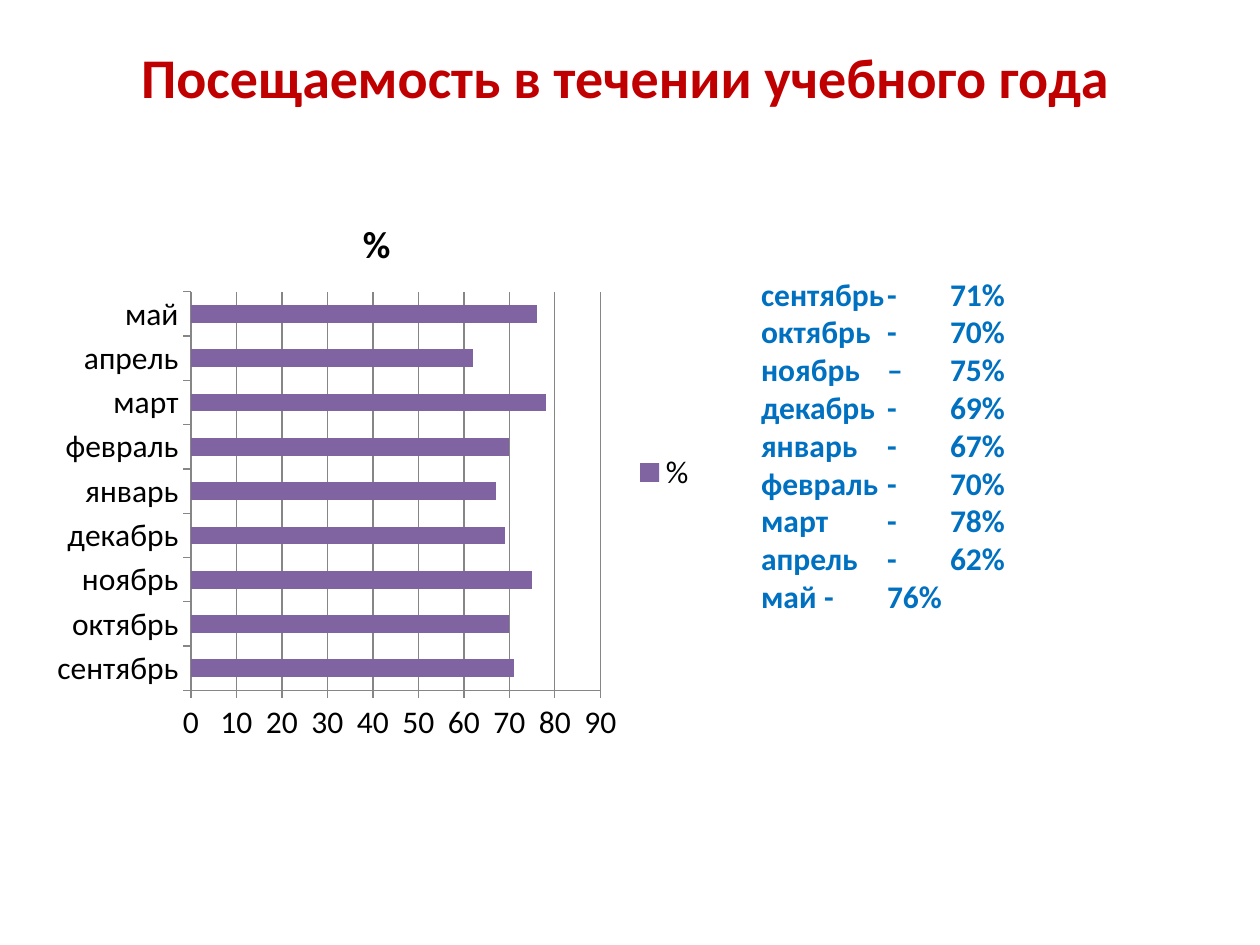
from lxml.etree import SubElement
from pptx import Presentation
from pptx.chart.data import CategoryChartData
from pptx.dml.color import RGBColor
from pptx.enum.chart import XL_CHART_TYPE, XL_LEGEND_POSITION, XL_TICK_MARK
from pptx.enum.text import MSO_ANCHOR, MSO_AUTO_SIZE, PP_ALIGN
from pptx.oxml.ns import qn
from pptx.util import Inches, Pt

COLORS = {"title": "C00000", "list": "0070C0", "bar": "8064A2",
          "text": "000000", "grid": "868686"}
FONT = "Calibri"
ATTENDANCE = {"сентябрь": 71, "октябрь": 70, "ноябрь": 75,
              "декабрь": 69, "январь": 67, "февраль": 70,
              "март": 78, "апрель": 62, "май": 76}
TAB_STOPS = (1.08, 1.3)  # dash column, value column


def rgb(name):
    return RGBColor.from_string(COLORS[name])


def style_font(font, size, color, bold=False):
    font.name, font.size, font.bold = FONT, Pt(size), bold
    font.color.rgb = rgb(color)


def place(sp, left, top, width, height):
    sp.left, sp.top = Inches(left), Inches(top)
    sp.width, sp.height = Inches(width), Inches(height)
    tf = sp.text_frame
    tf.word_wrap = True
    tf.auto_size = MSO_AUTO_SIZE.NONE
    tf.vertical_anchor = MSO_ANCHOR.TOP
    return tf


def add_run(p, text, size, color):
    r = p.add_run()
    r.text = text
    style_font(r.font, size, color, bold=True)


def add_title(s, text):
    p = place(s.shapes.title, 0.2, 0.29, 9.53, 0.64).paragraphs[0]
    p.alignment = PP_ALIGN.CENTER
    add_run(p, text, 32, "title")


def add_month_list(s):
    tf = place(s.placeholders[1], 5.94, 2.13, 3.7, 3.23)
    for i, (month, value) in enumerate(ATTENDANCE.items()):
        p = tf.paragraphs[0] if i == 0 else tf.add_paragraph()
        # No bullet, columns set by tab stops
        pPr = p._p.get_or_add_pPr()
        pPr.set("marL", "0")
        pPr.set("indent", "0")
        SubElement(pPr, qn("a:buNone"))
        tabs = SubElement(pPr, qn("a:tabLst"))
        for pos in TAB_STOPS:
            SubElement(tabs, qn("a:tab"), pos=str(Inches(pos)), algn="l")
        p.space_before = Pt(0)
        dash = "–" if month == "ноябрь" else "-"
        add_run(p, f"{month}\t{dash}\t{value}%", 18, "list")


def style_axis(axis):
    axis.major_tick_mark = XL_TICK_MARK.OUTSIDE
    axis.minor_tick_mark = XL_TICK_MARK.NONE
    axis.format.line.color.rgb = rgb("grid")
    style_font(axis.tick_labels.font, 18, "text")


def add_attendance_chart(s):
    data = CategoryChartData()
    data.categories = list(ATTENDANCE)
    data.add_series("%", list(ATTENDANCE.values()))
    chart = s.shapes.add_chart(
        XL_CHART_TYPE.BAR_CLUSTERED, Inches(0.35), Inches(1.53),
        Inches(5.28), Inches(4.44), data).chart
    style_font(chart.font, 18, "text")

    # Title and legend
    chart.has_title = True
    p = chart.chart_title.text_frame.paragraphs[0]
    add_run(p, "%", 21.6, "text")
    chart.chart_title.include_in_layout = False
    chart.has_legend = True
    chart.legend.position = XL_LEGEND_POSITION.RIGHT
    chart.legend.include_in_layout = False
    style_font(chart.legend.font, 18, "text")

    # Axes
    style_axis(chart.category_axis)
    axis = chart.value_axis
    style_axis(axis)
    axis.minimum_scale, axis.maximum_scale, axis.major_unit = 0, 90, 10
    axis.has_major_gridlines = True
    axis.major_gridlines.format.line.color.rgb = rgb("grid")

    # Bars
    plot = chart.plots[0]
    plot.gap_width = 150
    plot.vary_by_categories = False
    fill = plot.series[0].format.fill
    fill.solid()
    fill.fore_color.rgb = rgb("bar")


def main():
    prs = Presentation()
    prs.slide_width, prs.slide_height = Inches(10), Inches(7.5)
    s = prs.slides.add_slide(prs.slide_layouts[1])
    add_title(s, "Посещаемость в течении учебного года")
    add_attendance_chart(s)
    add_month_list(s)
    prs.save("out.pptx")


if __name__ == "__main__":
    main()
